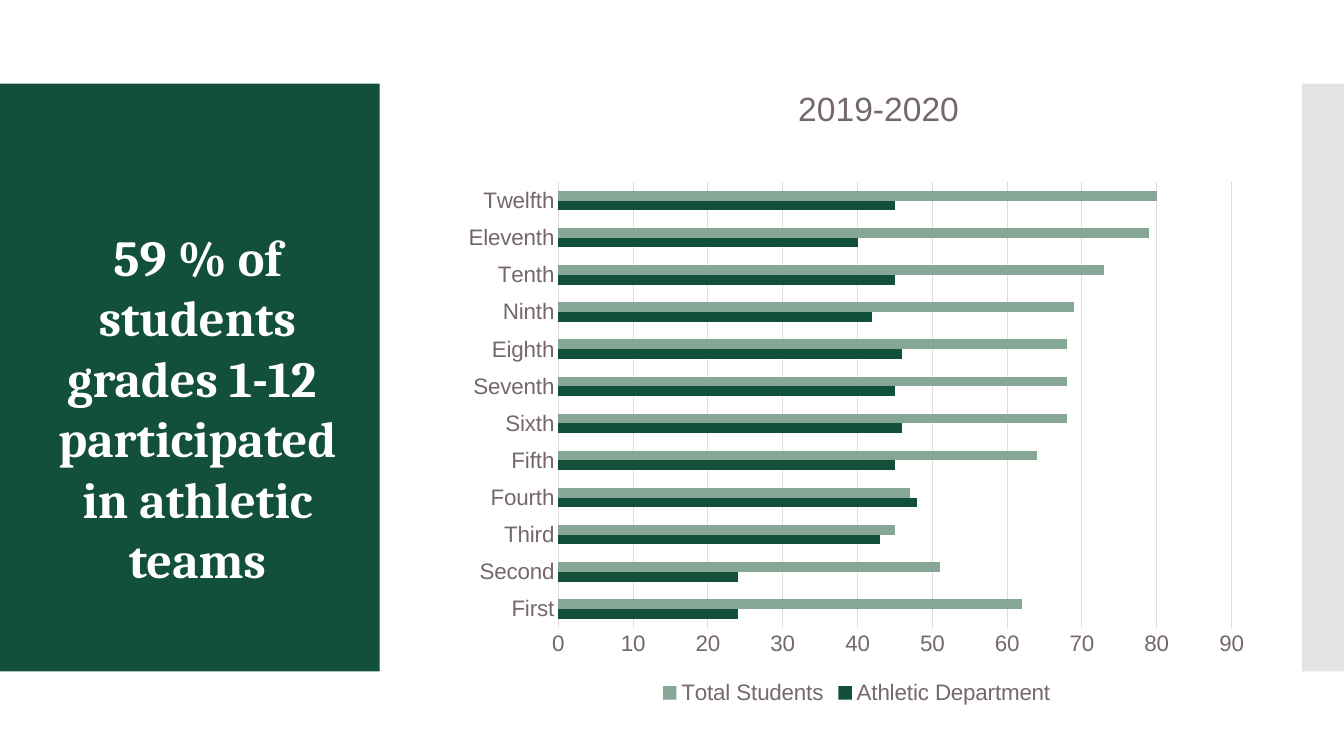
from dataclasses import dataclass

from lxml import etree
from pptx import Presentation
from pptx.chart.data import CategoryChartData
from pptx.dml.color import RGBColor
from pptx.enum.chart import XL_CHART_TYPE, XL_LEGEND_POSITION, XL_TICK_MARK
from pptx.enum.shapes import MSO_SHAPE
from pptx.enum.text import MSO_ANCHOR, MSO_AUTO_SIZE, PP_ALIGN
from pptx.oxml.ns import qn
from pptx.util import Cm, Pt

RECTANGLE = MSO_SHAPE.RECTANGLE
BAR_CLUSTERED = XL_CHART_TYPE.BAR_CLUSTERED
LEGEND_BOTTOM = XL_LEGEND_POSITION.BOTTOM
NO_TICKS = XL_TICK_MARK.NONE
CENTER = PP_ALIGN.CENTER
MIDDLE = MSO_ANCHOR.MIDDLE
NO_AUTOFIT = MSO_AUTO_SIZE.NONE
TITLE_ONLY_LAYOUT = 5


@dataclass(frozen=True)
class Theme:
    green: str = "13503B"
    sage: str = "86A795"
    panel_grey: str = "C8C8C8"
    label_grey: str = "75686B"
    grid_grey: str = "E0DCDD"
    white: str = "FFFFFF"
    title_font: str = "Cambria"
    chart_font: str = "Arial"
    title_size: int = 36
    chart_title_size: int = 24
    label_size: int = 16


@dataclass(frozen=True)
class Panel:
    left: float
    width: float
    color: str
    opacity: int = 100


@dataclass(frozen=True)
class Series:
    name: str
    values: tuple[int, ...]
    color: str


THEME = Theme()
PANEL_TOP, PANEL_HEIGHT = 2.11, 14.81
PANELS = (
    Panel(0, 9.57, THEME.green),
    Panel(32.81, 1.06, THEME.panel_grey, opacity=50),
)
TITLE_LINES = ("59 % of students", "grades 1-12 ", "participated", "in athletic teams")
GRADES = ("First", "Second", "Third", "Fourth", "Fifth", "Sixth",
          "Seventh", "Eighth", "Ninth", "Tenth", "Eleventh", "Twelfth")
SERIES = (
    Series("Athletic Department",
           (24, 24, 43, 48, 45, 46, 45, 46, 42, 45, 40, 45), THEME.green),
    Series("Total Students",
           (62, 51, 45, 47, 64, 68, 68, 68, 69, 73, 79, 80), THEME.sage),
)


def rgb(color: str) -> RGBColor:
    return RGBColor.from_string(color)


def style_font(font, name: str, size: int, color: str, bold: bool = False) -> None:
    font.name = name
    font.size = Pt(size)
    font.bold = bold
    font.color.rgb = rgb(color)


def add_panel(slide, panel: Panel) -> None:
    shape = slide.shapes.add_shape(
        RECTANGLE, Cm(panel.left), Cm(PANEL_TOP), Cm(panel.width), Cm(PANEL_HEIGHT))
    shape.shadow.inherit = False
    shape.fill.solid()
    shape.fill.fore_color.rgb = rgb(panel.color)
    shape.line.fill.background()
    if panel.opacity < 100:
        color = shape.fill._xPr.find(".//" + qn("a:srgbClr"))
        etree.SubElement(color, qn("a:alpha")).set("val", str(panel.opacity * 1000))


def fill_title(slide) -> None:
    title = slide.shapes.title
    title.left, title.top, title.width, title.height = Cm(0.43), Cm(5.51), Cm(9.09), Cm(9.5)
    frame = title.text_frame
    frame.text = "\n".join(TITLE_LINES)
    frame.word_wrap = True
    frame.auto_size = NO_AUTOFIT
    frame.vertical_anchor = MIDDLE
    for paragraph in frame.paragraphs:
        paragraph.alignment = CENTER
        for run in paragraph.runs:
            style_font(run.font, THEME.title_font, THEME.title_size, THEME.white, bold=True)
    # Bring the title in front of the panels
    slide.shapes._spTree.append(title._element)


def set_layout(parent, before: str, **fractions: float) -> None:
    """Place a chart part by fractions of the chart's size."""
    for old_layout in parent.findall(qn("c:layout")):
        parent.remove(old_layout)
    layout = etree.Element(qn("c:layout"))
    manual = etree.SubElement(layout, qn("c:manualLayout"))
    if "w" in fractions:
        etree.SubElement(manual, qn("c:layoutTarget")).set("val", "inner")
    for mode in ("xMode", "yMode"):
        etree.SubElement(manual, qn(f"c:{mode}")).set("val", "edge")
    for name, fraction in fractions.items():
        etree.SubElement(manual, qn(f"c:{name}")).set("val", str(fraction))
    parent.find(qn(before)).addprevious(layout)


def add_participation_chart(slide) -> None:
    data = CategoryChartData()
    data.categories = GRADES
    for series in SERIES:
        data.add_series(series.name, series.values)
    chart = slide.shapes.add_chart(
        BAR_CLUSTERED, Cm(11.43), Cm(1.37), Cm(20.32), Cm(16.51), data).chart
    style_font(chart.font, THEME.chart_font, THEME.label_size, THEME.label_grey)

    # Bars
    plot = chart.plots[0]
    plot.gap_width = 182
    plot.vary_by_categories = False
    for drawn, series in zip(plot.series, SERIES):
        drawn.format.fill.solid()
        drawn.format.fill.fore_color.rgb = rgb(series.color)

    # Axes
    category_axis, value_axis = chart.category_axis, chart.value_axis
    for axis in (category_axis, value_axis):
        axis.major_tick_mark = axis.minor_tick_mark = NO_TICKS
    value_axis.minimum_scale, value_axis.maximum_scale = 0, 90
    value_axis.major_unit = 10
    value_axis.has_major_gridlines = True
    value_axis.format.line.fill.background()
    for line in (category_axis.format.line, value_axis.major_gridlines.format.line):
        line.color.rgb = rgb(THEME.grid_grey)
        line.width = Pt(0.75)

    # Title and legend
    chart.has_title = True
    title_frame = chart.chart_title.text_frame
    title_frame.text = "2019-2020"
    style_font(title_frame.paragraphs[0].runs[0].font,
               THEME.chart_font, THEME.chart_title_size, THEME.label_grey)
    chart.has_legend = True
    chart.legend.position = LEGEND_BOTTOM
    chart.legend.include_in_layout = False

    # Placement inside the chart
    set_layout(chart.chart_title._element, "c:overlay", x=0.42, y=0.04)
    set_layout(plot._element.getparent(), "c:barChart", x=0.13, y=0.195, w=0.835, h=0.68)


def main() -> None:
    presentation = Presentation()
    presentation.slide_width, presentation.slide_height = Cm(33.87), Cm(19.05)
    slide = presentation.slides.add_slide(presentation.slide_layouts[TITLE_ONLY_LAYOUT])
    for panel in PANELS:
        add_panel(slide, panel)
    add_participation_chart(slide)
    fill_title(slide)
    presentation.save("out.pptx")


if __name__ == "__main__":
    main()
